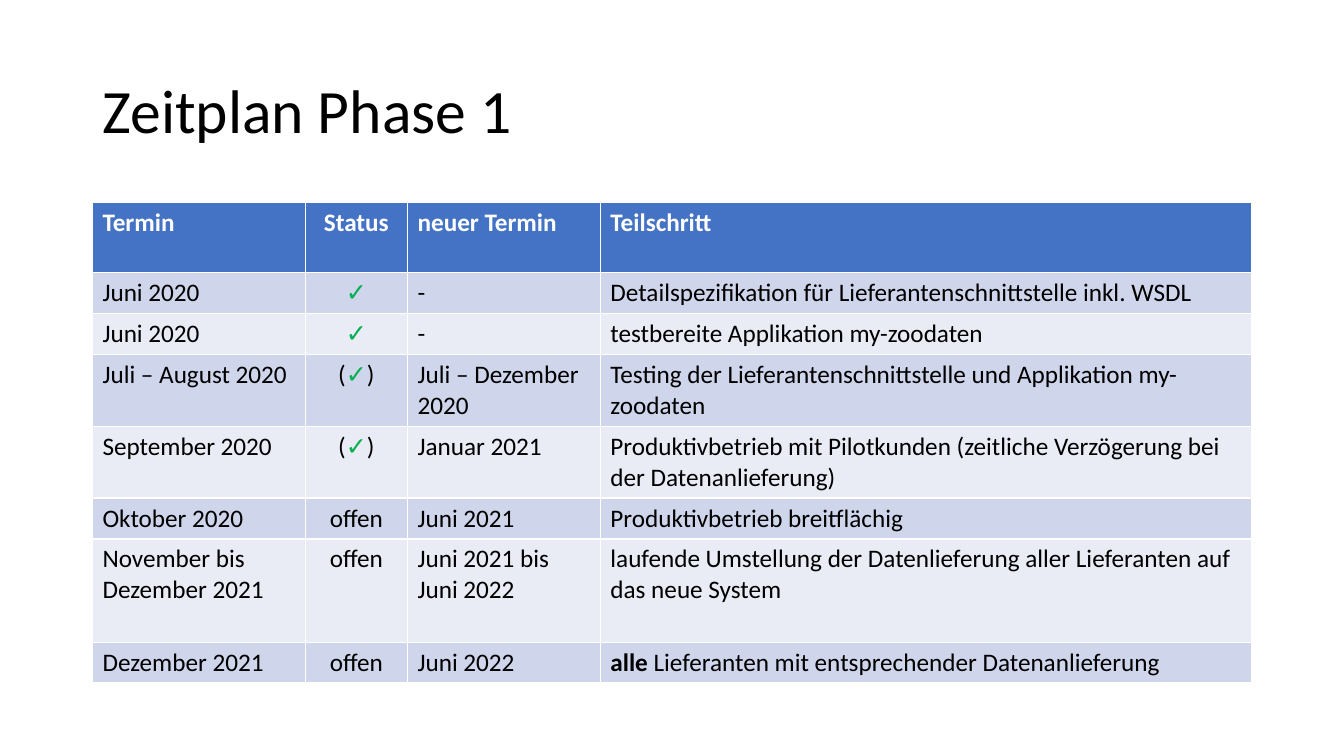
"""Build the slide with the schedule of phase 1 as a table."""
from dataclasses import dataclass

from pptx import Presentation
from pptx.dml.color import RGBColor
from pptx.enum.text import MSO_ANCHOR, PP_ALIGN as Align
from pptx.util import Cm, Pt


@dataclass(frozen=True)
class Theme:
    font: str = "Calibri"
    title_size: Pt = Pt(44)
    table_size: Pt = Pt(18)
    text: RGBColor = RGBColor(0x00, 0x00, 0x00)
    done: RGBColor = RGBColor(0x00, 0xB0, 0x50)
    header_text: RGBColor = RGBColor(0xFF, 0xFF, 0xFF)
    header_fill: RGBColor = RGBColor(0x44, 0x72, 0xC4)
    bands: tuple = (RGBColor(0xE9, 0xEB, 0xF5), RGBColor(0xCF, 0xD5, 0xEA))


theme = Theme()
LEFT, WIDTH = Cm(2.33), Cm(29.21)
COLUMN_WIDTHS = (5.36, 2.58, 4.86, 16.41)
STATUS_COLUMN = 1

SCHEDULE = [
    (1.78, "Termin", "Status", "neuer Termin", "Teilschritt"),
    (1.03, "Juni 2020", "✓", "-",
     "Detailspezifikation für Lieferantenschnittstelle inkl. WSDL"),
    (1.03, "Juni 2020", "✓", "-", "testbereite Applikation my-zoodaten"),
    (1.81, "Juli – August 2020", "(|✓|)", "Juli – Dezember 2020",
     "Testing der Lieferantenschnittstelle und Applikation my-zoodaten"),
    (1.81, "September 2020", "(|✓|)", "Januar 2021",
     "Produktivbetrieb mit Pilotkunden (zeitliche Verzögerung bei der Datenanlieferung)"),
    (1.03, "Oktober 2020", "offen", "Juni 2021", "Produktivbetrieb breitflächig"),
    (2.6, "November bis Dezember 2021", "offen", "Juni 2021 bis Juni 2022",
     "laufende Umstellung der Datenlieferung aller Lieferanten auf das neue System"),
    (1.03, "Dezember 2021", "offen", "Juni 2022",
     "alle| Lieferanten mit entsprechender Datenanlieferung"),
]


def style_font(font, size, color, bold=False):
    font.name, font.size, font.bold = theme.font, size, bold
    font.color.rgb = color


deck = Presentation()
deck.slide_width, deck.slide_height = Cm(33.87), Cm(19.05)
page = deck.slides.add_slide(deck.slide_layouts.get_by_name("Title Only"))

title = page.shapes.title
title.left, title.top, title.width, title.height = LEFT, Cm(1.01), WIDTH, Cm(3.68)
title.text_frame.text = "Zeitplan Phase 1"
title.text_frame.vertical_anchor = MSO_ANCHOR.MIDDLE
heading = title.text_frame.paragraphs[0]
heading.alignment = Align.LEFT
heading.line_spacing = 0.9
style_font(heading.font, theme.title_size, theme.text)

height = Cm(sum(entry[0] for entry in SCHEDULE))
table = page.shapes.add_table(
    len(SCHEDULE), len(COLUMN_WIDTHS), LEFT, Cm(5.09), WIDTH, height).table
for column, width in zip(table.columns, COLUMN_WIDTHS):
    column.width = Cm(width)

for row_index, (row_height, *texts) in enumerate(SCHEDULE):
    table.rows[row_index].height = Cm(row_height)
    is_header = row_index == 0
    for column_index, text in enumerate(texts):
        cell = table.cell(row_index, column_index)
        cell.fill.solid()
        cell.fill.fore_color.rgb = theme.header_fill if is_header else theme.bands[row_index % 2]
        para = cell.text_frame.paragraphs[0]
        para.alignment = Align.CENTER if column_index == STATUS_COLUMN else Align.LEFT
        style_font(para.font, theme.table_size,
                   theme.header_text if is_header else theme.text, is_header)
        for part in text.split("|"):
            span = para.add_run()
            span.text = part
            if part == "✓":
                span.font.color.rgb = theme.done
            elif part == "alle":
                span.font.bold = True

deck.save("out.pptx")
